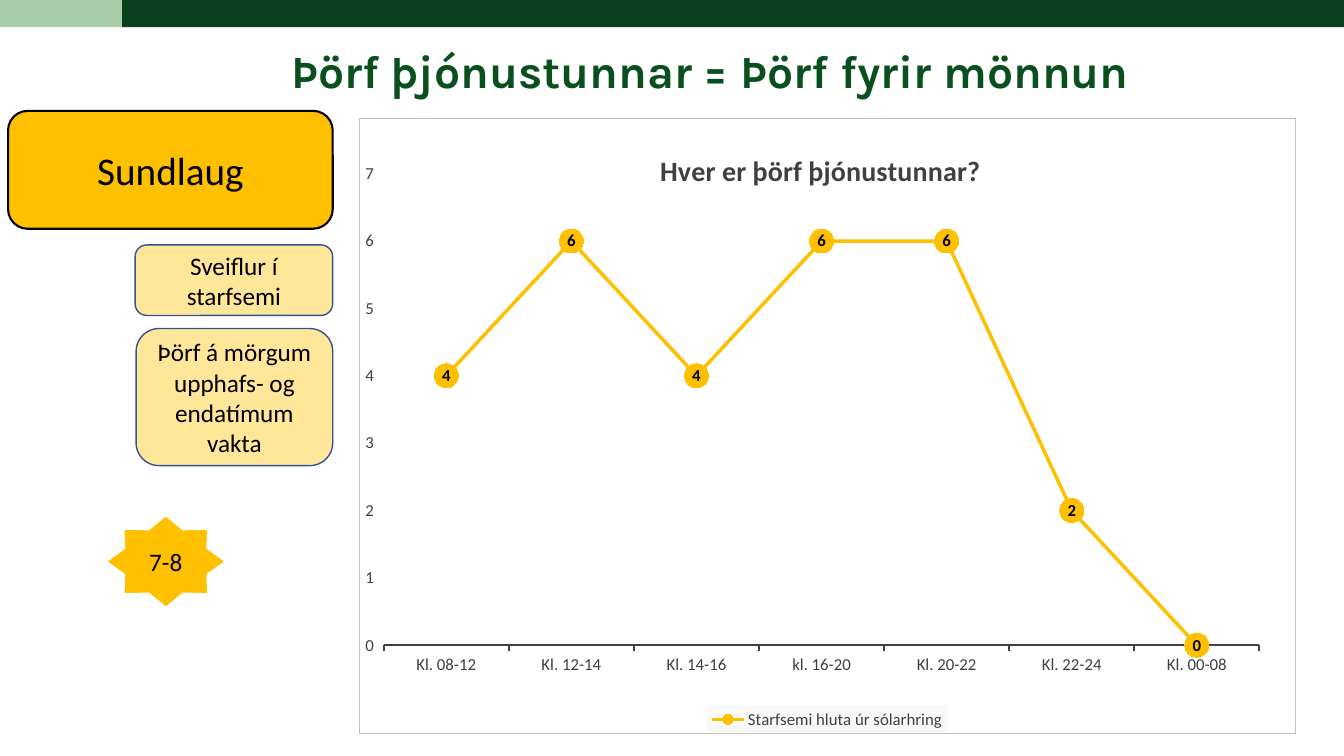
from lxml import etree
from pptx import Presentation
from pptx.chart.data import CategoryChartData
from pptx.dml.color import RGBColor
from pptx.enum.chart import (XL_AXIS_CROSSES, XL_CHART_TYPE, XL_LABEL_POSITION,
                             XL_LEGEND_POSITION, XL_MARKER_STYLE, XL_TICK_MARK)
from pptx.enum.shapes import MSO_SHAPE
from pptx.enum.text import MSO_ANCHOR, PP_ALIGN
from pptx.oxml import parse_xml
from pptx.oxml.ns import nsdecls, qn
from pptx.util import Inches, Pt

COLORS = {
    "dark": "09411E", "light": "A9CCA9", "title": "09501E", "amber": "FFC000",
    "cream": "FFE699", "blue": "325491", "black": "000000", "white": "FFFFFF",
    "text": "404040", "border": "BFBFBF", "legend": "F9F9F9",
}


def style_font(font, size, color, bold=False, name="Calibri"):
    font.size = Pt(size)
    font.name = name
    font.bold = bold
    font.color.rgb = RGBColor.from_string(COLORS[color])


def set_layout(parent, index, **values):
    for old in parent.findall(qn("c:layout")):
        parent.remove(old)
    layout = etree.Element(qn("c:layout"))
    manual = etree.SubElement(layout, qn("c:manualLayout"))
    for tag, value in values.items():
        etree.SubElement(manual, qn(f"c:{tag}")).set("val", str(value))
    parent.insert(index, layout)


prs = Presentation()
prs.slide_width, prs.slide_height = Inches(13.33), Inches(7.5)
s = prs.slides.add_slide(prs.slide_layouts[6])

for left, width, color in [(1.21, 12.12, "dark"), (0, 1.21, "light")]:
    sp = s.shapes.add_shape(MSO_SHAPE.RECTANGLE, Inches(left), 0, Inches(width), Inches(0.27))
    sp.shadow.inherit = False
    sp.fill.solid()
    sp.fill.fore_color.rgb = RGBColor.from_string(COLORS[color])
    sp.line.fill.background()

tf = s.shapes.add_textbox(Inches(2.79), Inches(0.43), Inches(10.83 - 0.29), Inches(0.86)).text_frame
tf.word_wrap = True
p = tf.paragraphs[0]
p.line_spacing = 0.9
p.space_before = Pt(10)
r = p.add_run()
r.text = "Þörf þjónustunnar = Þörf fyrir mönnun"
style_font(r.font, 33, "title", True, "Karla")

data = CategoryChartData()
data.categories = ["Kl. 08-12", "Kl. 12-14", "Kl. 14-16", "kl. 16-20",
                   "Kl. 20-22", "Kl. 22-24", "Kl. 00-08"]
data.add_series("Starfsemi hluta úr sólarhring", [4, 6, 4, 6, 6, 2, 0])
chart = s.shapes.add_chart(XL_CHART_TYPE.LINE_MARKERS, Inches(3.56), Inches(1.17),
                           Inches(9.29), Inches(6.11), data).chart
style_font(chart.font, 10, "black")

chart.has_title = True
r = chart.chart_title.text_frame.paragraphs[0].add_run()
r.text = "Hver er þörf þjónustunnar?"
style_font(r.font, 20, "text", True)
set_layout(chart.chart_title._element, 1, xMode="edge", yMode="edge", x=0.316, y=0.045)
set_layout(chart._chartSpace.chart.plotArea, 0, layoutTarget="inner", xMode="edge",
           yMode="edge", x=0.026, y=0.09, w=0.936, h=0.767)

cat, val = chart.category_axis, chart.value_axis
for axis in (cat, val):
    axis.has_major_gridlines = False
    axis.major_tick_mark = XL_TICK_MARK.OUTSIDE
    style_font(axis.tick_labels.font, 12, "text")
cat.format.line.color.rgb = RGBColor.from_string(COLORS["text"])
cat.format.line.width = Pt(1.5)
cat.crosses = XL_AXIS_CROSSES.MAXIMUM
val.format.line.fill.background()
val.minimum_scale, val.maximum_scale, val.major_unit = 0, 7, 1

chart.has_legend = True
legend = chart.legend
legend.position = XL_LEGEND_POSITION.BOTTOM
legend.include_in_layout = False
style_font(legend.font, 12, "text")
legend._element.find(qn("c:txPr")).addprevious(parse_xml(
    f'<c:spPr {nsdecls("c", "a")}><a:solidFill><a:srgbClr val="{COLORS["legend"]}"/>'
    '</a:solidFill></c:spPr>'))
chart._chartSpace.chart.addnext(parse_xml(
    f'<c:spPr {nsdecls("c", "a")}><a:solidFill><a:srgbClr val="{COLORS["white"]}"/></a:solidFill>'
    f'<a:ln w="{Pt(0.75)}"><a:solidFill><a:srgbClr val="{COLORS["border"]}"/></a:solidFill></a:ln>'
    '</c:spPr>'))

plot = chart.plots[0]
plot.vary_by_categories = False
series = plot.series[0]
series.smooth = False
series.format.line.color.rgb = RGBColor.from_string(COLORS["amber"])
series.format.line.width = Pt(2.5)
marker = series.marker
marker.style = XL_MARKER_STYLE.CIRCLE
marker.size = 17
marker.format.fill.solid()
marker.format.fill.fore_color.rgb = RGBColor.from_string(COLORS["amber"])
marker.format.line.fill.background()
labels = series.data_labels
labels.show_value = True
labels.position = XL_LABEL_POSITION.CENTER
style_font(labels.font, 12, "black", True)

boxes = [
    ("Sundlaug", MSO_SHAPE.ROUNDED_RECTANGLE, 0.08, 1.1, 3.22, 1.17, "amber", "black", 1.5, 28),
    ("7-8", MSO_SHAPE.STAR_8_POINT, 1.05, 5.11, 1.19, 0.92, "amber", "white", 1.5, 18),
    ("Sveiflur í starfsemi", MSO_SHAPE.ROUNDED_RECTANGLE,
     1.34, 2.43, 1.96, 0.7, "cream", "blue", 1, 18),
    ("Þörf á mörgum upphafs- og endatímum vakta", MSO_SHAPE.ROUNDED_RECTANGLE,
     1.35, 3.26, 1.95, 1.36, "cream", "blue", 1, 18),
]
for text, kind, left, top, width, height, fill, line, weight, size in boxes:
    sp = s.shapes.add_shape(kind, Inches(left), Inches(top), Inches(width), Inches(height))
    sp.shadow.inherit = False
    sp.fill.solid()
    sp.fill.fore_color.rgb = RGBColor.from_string(COLORS[fill])
    sp.line.color.rgb = RGBColor.from_string(COLORS[line])
    sp.line.width = Pt(weight)
    tf = sp.text_frame
    tf.word_wrap = True
    tf.vertical_anchor = MSO_ANCHOR.MIDDLE
    p = tf.paragraphs[0]
    p.alignment = PP_ALIGN.CENTER
    r = p.add_run()
    r.text = text
    style_font(r.font, size, "black")

prs.save("out.pptx")
